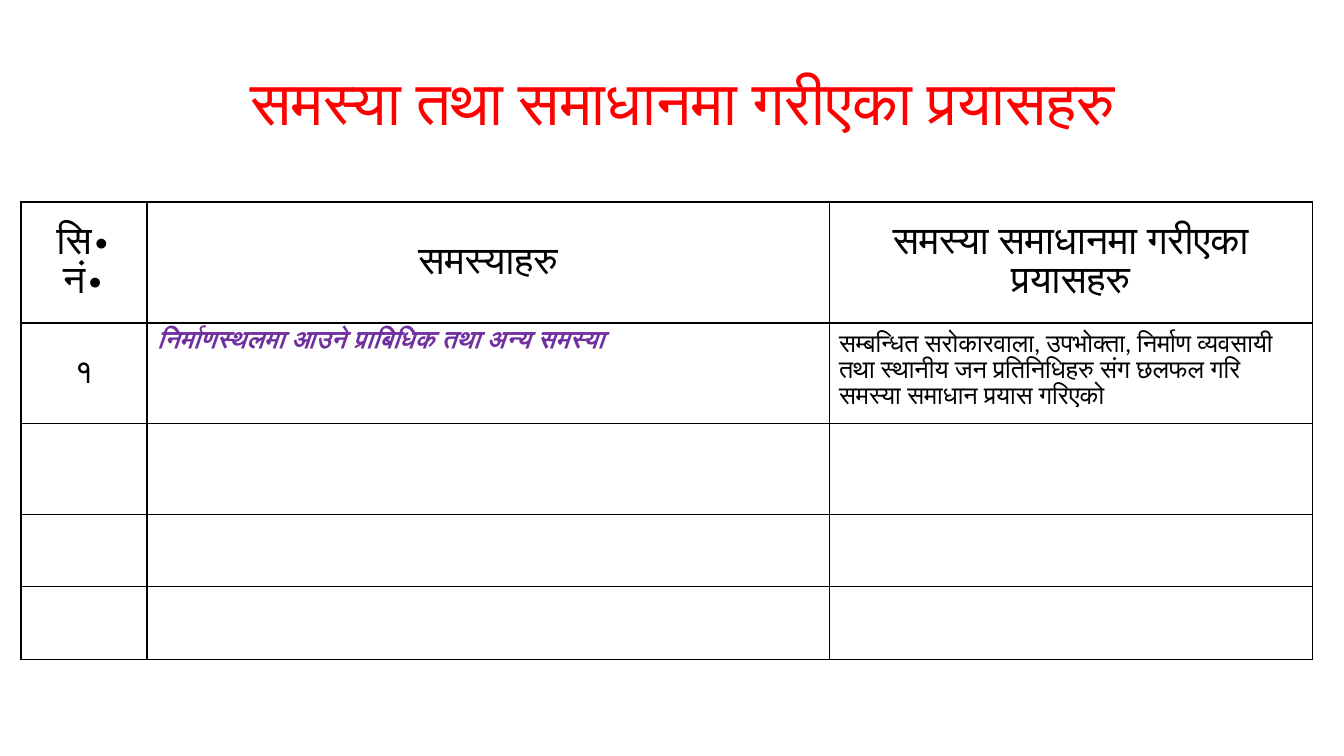
import pptx
import pptx.dml.color
import pptx.enum.text
import pptx.oxml
import pptx.oxml.ns
import pptx.util

PX = 9071
FONT = "Calibri"
BLACK = "000000"
RED = "FF0000"
PURPLE = "7030A0"
CENTER = pptx.enum.text.PP_ALIGN.CENTER
LEFT = pptx.enum.text.PP_ALIGN.LEFT
MIDDLE = pptx.enum.text.MSO_ANCHOR.MIDDLE
TOP = pptx.enum.text.MSO_ANCHOR.TOP

COLUMN_WIDTHS = [126, 682, 483]
ROW_HEIGHTS = [121, 91, 91, 72, 73]
HEADERS = ["सि∙ नं∙", "समस्याहरु", "समस्या समाधानमा गरीएका प्रयासहरु"]
PROBLEM = "निर्माणस्थलमा आउने प्राबिधिक तथा अन्य समस्या"
EFFORT = ("सम्बन्धित सरोकारवाला, उपभोक्ता, निर्माण व्यवसायी तथा स्थानीय जन "
          "प्रतिनिधिहरु संग छलफल गरि समस्या समाधान प्रयास गरिएको")


def px(n):
    return pptx.util.Emu(n * PX)


def rgb(color):
    return pptx.dml.color.RGBColor.from_string(color)


def add_text(tf, text, size, color=BLACK, align=CENTER, emphasis=False):
    p = tf.paragraphs[0]
    p.alignment = align
    r = p.add_run()
    r.text = text
    r.font.name = FONT
    r.font.size = pptx.util.Pt(size)
    r.font.color.rgb = rgb(color)
    r.font.bold = emphasis
    r.font.italic = emphasis


def add_title(s, text):
    sp = s.shapes.add_textbox(px(21), px(55), px(1323), px(92))
    tf = sp.text_frame
    tf.word_wrap = True
    tf.vertical_anchor = MIDDLE
    add_text(tf, text, 44, RED)


def style_cell(cell):
    tc_pr = cell._tc.get_or_add_tcPr()
    for side in ("lnL", "lnR", "lnT", "lnB"):
        tc_pr.append(pptx.oxml.parse_xml(
            f'<a:{side} {pptx.oxml.ns.nsdecls("a")} w="12700"><a:solidFill>'
            f'<a:srgbClr val="{BLACK}"/></a:solidFill></a:{side}>'))
    cell.fill.background()


def add_grid(s):
    frame = s.shapes.add_table(len(ROW_HEIGHTS), len(COLUMN_WIDTHS), px(21), px(202),
                               px(sum(COLUMN_WIDTHS)), px(sum(ROW_HEIGHTS)))
    table = frame.table
    table.first_row = False
    table.horz_banding = False
    for column, width in zip(table.columns, COLUMN_WIDTHS):
        column.width = px(width)
    for row, height in zip(table.rows, ROW_HEIGHTS):
        row.height = px(height)
    for cell in table.iter_cells():
        style_cell(cell)
    return table


def fill_cell(cell, text, size, anchor=MIDDLE, **style):
    cell.vertical_anchor = anchor
    add_text(cell.text_frame, text, size, **style)


def main():
    prs = pptx.Presentation()
    prs.slide_width = pptx.util.Inches(13.33)
    prs.slide_height = pptx.util.Inches(7.5)
    s = prs.slides.add_slide(prs.slide_layouts[6])
    add_title(s, "समस्या तथा समाधानमा गरीएका प्रयासहरु")
    table = add_grid(s)
    for i, header in enumerate(HEADERS):
        fill_cell(table.cell(0, i), header, 28)
    fill_cell(table.cell(1, 0), "१", 24)
    fill_cell(table.cell(1, 1), PROBLEM, 18, TOP, color=PURPLE, align=LEFT, emphasis=True)
    fill_cell(table.cell(1, 2), EFFORT, 18, TOP, align=LEFT)
    prs.save("out.pptx")


if __name__ == "__main__":
    main()
